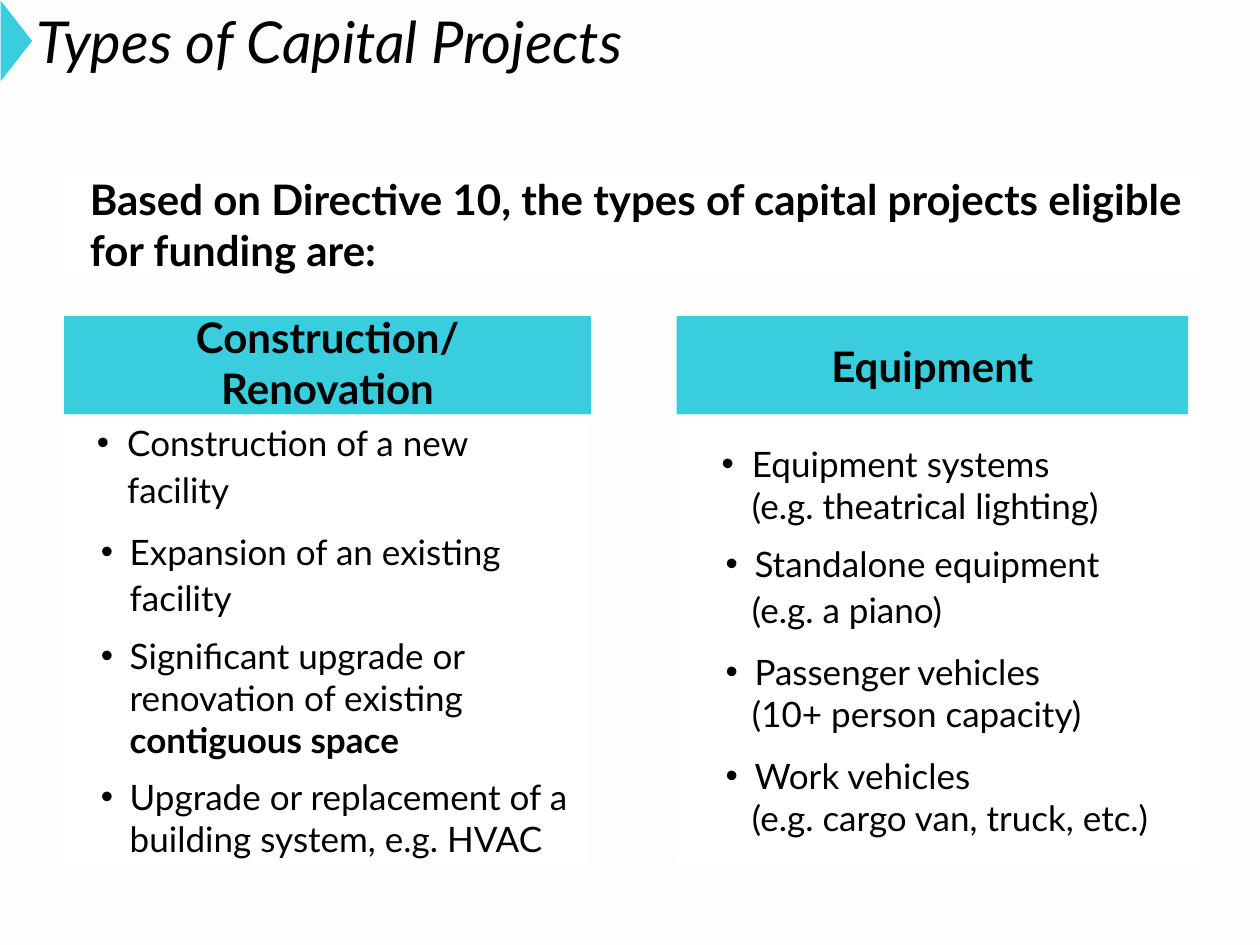
from lxml import etree
from pptx import Presentation
from pptx.dml.color import RGBColor
from pptx.enum import shapes, text
from pptx.oxml import ns
from pptx import util as u

BLACK = RGBColor(0, 0, 0)
WHITE = RGBColor(255, 255, 255)
PAPER = RGBColor(0xFD, 0xFD, 0xFB)
TEAL = RGBColor(0x39, 0xCD, 0xDD)
KIND = shapes.MSO_SHAPE
ALIGN = text.PP_ALIGN
FIRST = (0.5, -0.24)
NEXT = (0.52, -0.23)
PLAIN = (0.5, 0)


class Deck:
    cell = 0.1
    face = "Lato"

    def __init__(self, cols, rows):
        self.prs = Presentation()
        self.prs.slide_width = self.span(cols)
        self.prs.slide_height = self.span(rows)
        self.slide = self.prs.slides.add_slide(self.prs.slide_layouts[6])
        self.slide.background.fill.solid()
        self.slide.background.fill.fore_color.rgb = PAPER

    def span(self, cells):
        return u.Inches(cells * self.cell)

    def place(self, box):
        return [self.span(n) for n in box]

    def shape(self, kind, box, fill):
        item = self.slide.shapes.add_shape(kind, *self.place(box))
        item.shadow.inherit = False
        item.fill.solid()
        item.fill.fore_color.rgb = fill
        item.line.fill.background()
        return item

    def label(self, box):
        return self.slide.shapes.add_textbox(*self.place(box))

    def frame(self, item, pads):
        body = item.text_frame
        body.word_wrap = True
        body.vertical_anchor = text.MSO_ANCHOR.MIDDLE
        (body.margin_left, body.margin_top,
         body.margin_right, body.margin_bottom) = map(u.Inches, pads)
        return body

    def style(self, para, size, bold=False, slant=False):
        font = para.font
        font.name, font.size = self.face, u.Pt(size)
        font.bold, font.italic = bold, slant
        font.color.rgb = BLACK

    def line(self, item, words, size, pads, left=0, align=ALIGN.LEFT, **look):
        para = self.frame(item, pads).paragraphs[0]
        para.text = words
        para.alignment = align
        para._p.get_or_add_pPr().set("marL", str(u.Inches(left)))
        self.style(para, size, **look)

    def bullet(self, props):
        tint = etree.SubElement(props, ns.qn("a:buClr"))
        etree.SubElement(tint, ns.qn("a:srgbClr"), val=str(BLACK))
        etree.SubElement(props, ns.qn("a:buFont"), typeface="Arial")
        etree.SubElement(props, ns.qn("a:buChar"), char="•")

    def points(self, box, pads, items):
        body = self.frame(self.shape(KIND.RECTANGLE, box, WHITE), pads)
        for i, (words, inset, lead, *strong) in enumerate(items):
            para = body.add_paragraph() if i else body.paragraphs[0]
            para.alignment = ALIGN.LEFT
            para.line_spacing = lead
            para.space_before = u.Pt(9 if inset == NEXT else 0)
            props = para._p.get_or_add_pPr()
            for key, size in zip(("marL", "indent"), inset):
                props.set(key, str(u.Inches(size)))
            if inset != PLAIN:
                self.bullet(props)
            self.style(para, 20)
            para.add_run().text = words
            for part in strong:
                run = para.add_run()
                run.text = part
                run.font.bold = True


def main():
    deck = Deck(100, 75)
    deck.line(deck.label((0, 0, 100, 6.4)), "Types of Capital Projects", 33,
              (0.1, 0.05, 0.1, 0.05), 0.19, slant=True)

    intro = deck.shape(KIND.ROUNDED_RECTANGLE, (5.1, 13.9, 90.2, 7.8), WHITE)
    intro.adjustments[0] = 0.06
    deck.line(intro, "Based on Directive 10, the types of capital projects "
              "eligible for funding are:", 24, (0, 0.04, 0.07, 0.04), 0.19,
              bold=True)

    works = [
        ("Construction of a new facility", FIRST, 1.1),
        ("Expansion of an existing facility", NEXT, 1.1),
        ("Significant upgrade or renovation of existing ", NEXT, 1,
         "contiguous space"),
        ("Upgrade or replacement of a building system, e.g. HVAC", NEXT, 1),
    ]
    gear = [
        ("Equipment systems", FIRST, 1.1),
        ("(e.g. theatrical lighting)", PLAIN, 1),
        ("Standalone equipment", NEXT, 1),
        ("(e.g. a piano)", PLAIN, 1.1),
        ("Passenger vehicles", NEXT, 1.1),
        ("(10+ person capacity)", PLAIN, 1),
        ("Work vehicles", NEXT, 1.1),
        ("(e.g. cargo van, truck, etc.)", PLAIN, 1),
    ]
    panes = [
        (5.1, 41.8, "Construction/Renovation", (0.3, 0, 0.3, 0.05),
         (0, 0.05, 0.1, 0.05), works),
        (53.7, 40.6, "Equipment", (0.07, 0, 0.07, 0), (0.1, 0, 0.1, 0), gear),
    ]
    for left, wide, head, rim, pads, items in panes:
        bar = deck.shape(KIND.RECTANGLE, (left, 25.1, wide, 7.8), TEAL)
        deck.line(bar, head, 24, rim, align=ALIGN.CENTER, bold=True)
        deck.points((left, 32.9, 41.6, 35.6), pads, items)

    mark = deck.shape(KIND.FLOWCHART_EXTRACT, (-1.9, 2, 6.4, 2.5), TEAL)
    mark.rotation = 90
    deck.prs.save("out.pptx")


if __name__ == "__main__":
    main()
